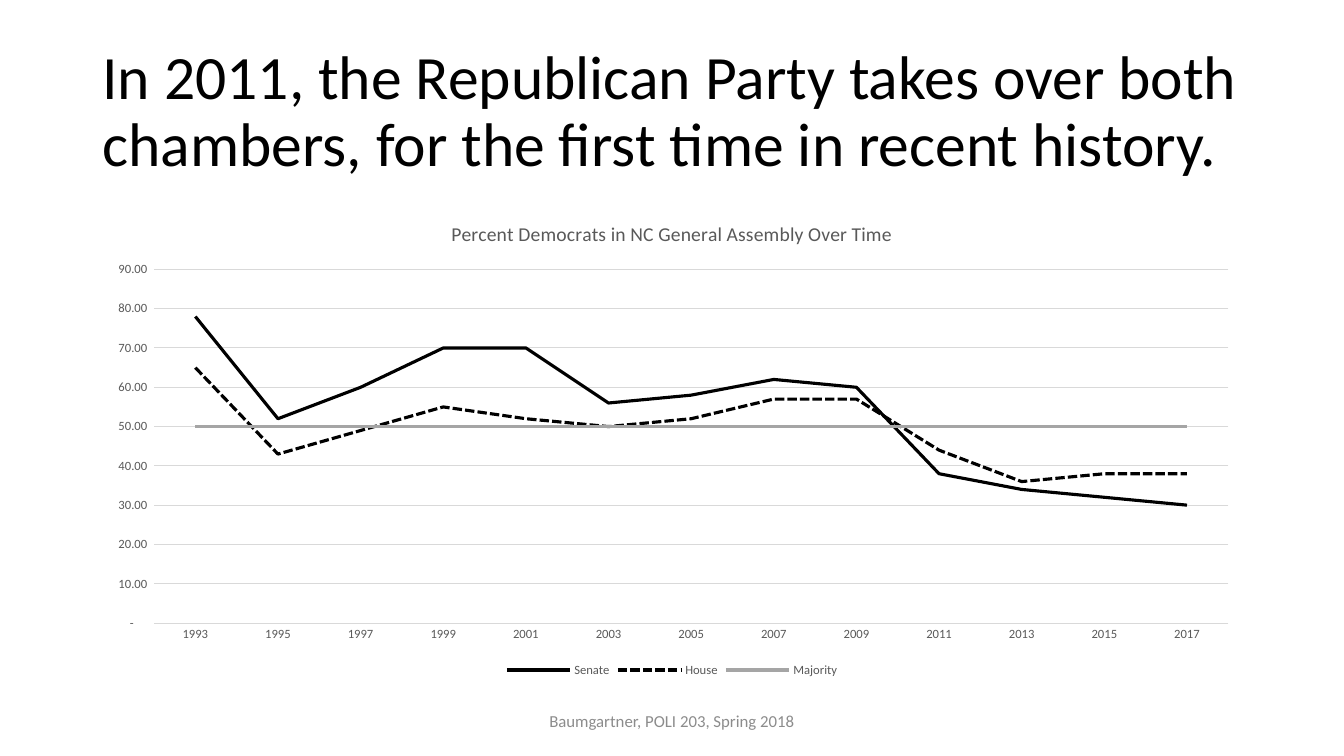
import pptx
import pptx.chart.data
import pptx.dml.color
import pptx.enum.chart
import pptx.enum.dml
import pptx.enum.text
import pptx.util
from pptx.util import Cm, Pt

COLOURS = {
    "text": "000000",
    "footer": "8C8C8C",
    "label": "595959",
    "grid": "D9D9D9",
    "party": "000000",
    "majority": "A5A5A5",
}
ACCOUNTING = r'_(* #,##0.00_);_(* \(#,##0.00\);_(* "-"??_);_(@_)'
YEARS = [str(year) for year in range(1993, 2018, 2)]
SOLID = pptx.enum.dml.MSO_LINE.SOLID
DASHED = pptx.enum.dml.MSO_LINE.SQUARE_DOT

# Name, percentages, line colour, dash
SERIES = [
    ("Senate", [78, 52, 60, 70, 70, 56, 58, 62, 60, 38, 34, 32, 30], "party", SOLID),
    ("House", [65, 43, 49, 55, 52, 50, 52, 57, 57, 44, 36, 38, 38], "party", DASHED),
    ("Majority", [50] * len(YEARS), "majority", SOLID),
]


class SlideWriter:
    """Holds the style and the current slide."""

    font_name = "Calibri"

    def __init__(self, slide):
        self.slide = slide

    def colour(self, name):
        return pptx.dml.color.RGBColor.from_string(COLOURS[name])

    def style_font(self, font, size, colour):
        font.name = self.font_name
        font.size = Pt(size)
        font.bold = False
        font.color.rgb = self.colour(colour)

    def style_line(self, line, width, colour):
        line.color.rgb = self.colour(colour)
        line.width = Pt(width)

    def fill_text(self, box, place, text, size, colour, align):
        box.left, box.top, box.width, box.height = place
        frame = box.text_frame
        frame.word_wrap = True
        frame.auto_size = pptx.enum.text.MSO_AUTO_SIZE.NONE
        frame.vertical_anchor = pptx.enum.text.MSO_ANCHOR.MIDDLE
        para = frame.paragraphs[0]
        para.text = text
        para.alignment = align
        self.style_font(para.font, size, colour)
        return para

    def title(self, place, text):
        para = self.fill_text(self.slide.shapes.title, place, text, 44, "text",
                              pptx.enum.text.PP_ALIGN.LEFT)
        para.line_spacing = 0.9

    def footer(self, place, text):
        box = self.slide.shapes.add_textbox(*place)
        self.fill_text(box, place, text, 12, "footer", pptx.enum.text.PP_ALIGN.CENTER)

    def line_chart(self, place, heading, categories, series_rows):
        data = pptx.chart.data.CategoryChartData(number_format=ACCOUNTING)
        data.categories = categories
        for name, values, _, _ in series_rows:
            data.add_series(name, values)
        chart = self.slide.shapes.add_chart(
            pptx.enum.chart.XL_CHART_TYPE.LINE, *place, data).chart
        self.style_font(chart.font, 10, "text")

        # Chart title
        chart.has_title = True
        para = chart.chart_title.text_frame.paragraphs[0]
        para.text = heading
        self.style_font(para.font, 14, "label")
        chart.chart_title.include_in_layout = False

        # Legend
        chart.has_legend = True
        chart.legend.position = pptx.enum.chart.XL_LEGEND_POSITION.BOTTOM
        chart.legend.include_in_layout = False
        self.style_font(chart.legend.font, 9, "label")

        # Axes
        for axis in (chart.category_axis, chart.value_axis):
            axis.major_tick_mark = pptx.enum.chart.XL_TICK_MARK.NONE
            axis.minor_tick_mark = pptx.enum.chart.XL_TICK_MARK.NONE
            self.style_font(axis.tick_labels.font, 9, "label")
        self.style_line(chart.category_axis.format.line, 0.75, "grid")
        values_axis = chart.value_axis
        values_axis.minimum_scale, values_axis.maximum_scale = 0, 90
        values_axis.major_unit = 10
        values_axis.format.line.fill.background()
        self.style_line(values_axis.major_gridlines.format.line, 0.75, "grid")
        values_axis.tick_labels.number_format = ACCOUNTING
        values_axis.tick_labels.number_format_is_linked = False

        # Lines
        plot = chart.plots[0]
        plot.vary_by_categories = False
        for series, (_, _, colour, dash) in zip(plot.series, series_rows):
            series.smooth = False
            series.marker.style = pptx.enum.chart.XL_MARKER_STYLE.NONE
            self.style_line(series.format.line, 2.25, colour)
            series.format.line.dash_style = dash


def main():
    deck = pptx.Presentation()
    deck.slide_width, deck.slide_height = Cm(33.87), Cm(19.05)
    title_only = deck.slide_layouts[5]
    writer = SlideWriter(deck.slides.add_slide(title_only))

    left, width = Cm(2.33), Cm(29.21)
    writer.title(
        (left, Cm(1.01), width, Cm(3.68)),
        "In 2011, the Republican Party takes over both chambers, "
        "for the first time in recent history.")
    writer.footer((Cm(11.22), Cm(17.66), Cm(11.43), Cm(1.01)),
                  "Baumgartner, POLI 203, Spring 2018")
    writer.line_chart((left, Cm(5.08), width, Cm(12.09)),
                      "Percent Democrats in NC General Assembly Over Time",
                      YEARS, SERIES)
    deck.save("out.pptx")


if __name__ == "__main__":
    main()
